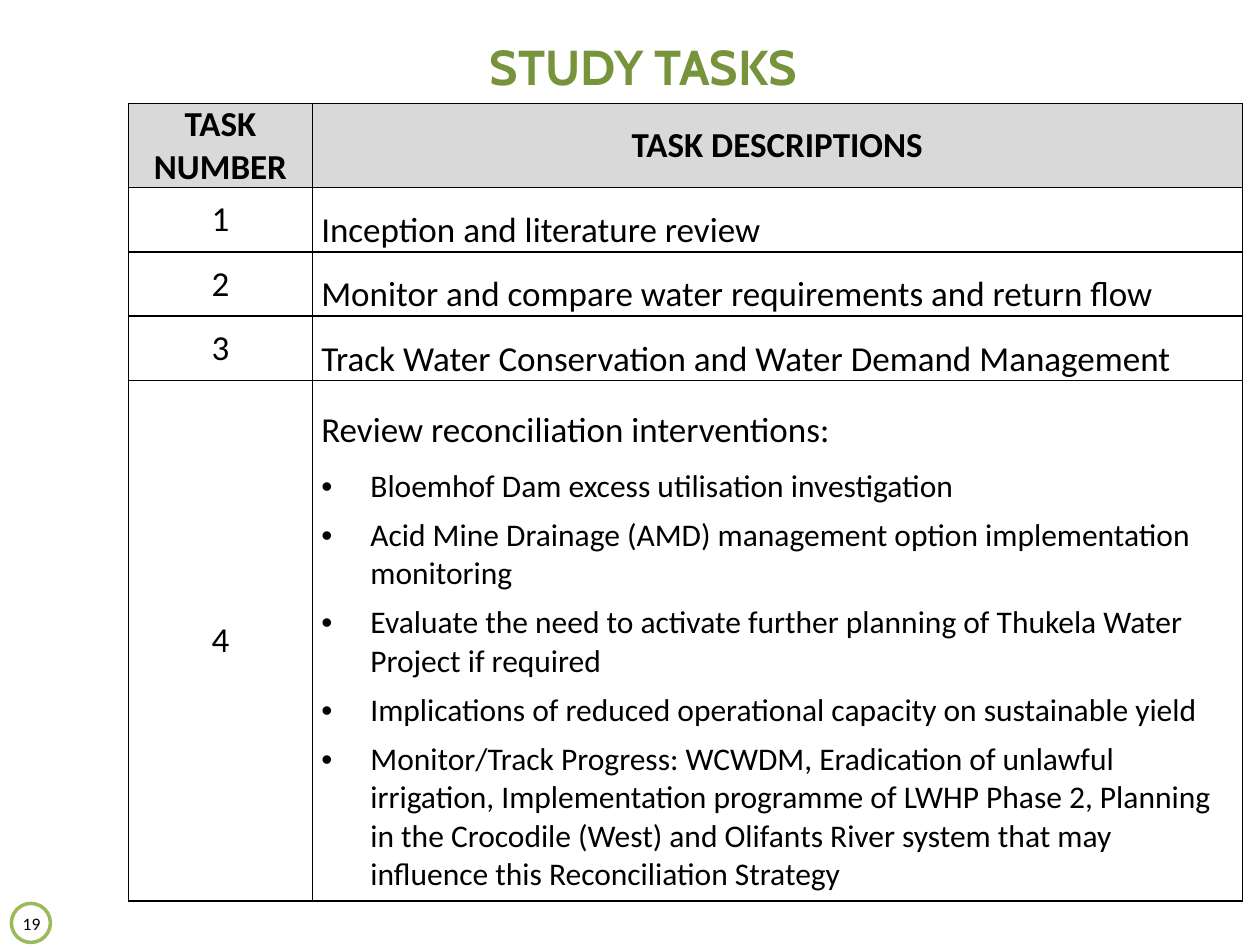
from lxml.etree import SubElement as Sub
from pptx import Presentation
from pptx.dml.color import RGBColor as RGB
from pptx.enum.shapes import MSO_SHAPE as Shape
from pptx.enum.text import MSO_ANCHOR as Anchor, PP_ALIGN as Align
from pptx.oxml.ns import qn
from pptx.util import Inches, Pt

TITLE = "STUDY TASKS"
PAGE = "19"
HEADS = ("TASK NUMBER", "TASK DESCRIPTIONS")
TASKS = [
    ("Inception and literature review", []),
    ("Monitor and compare water requirements and return flow", []),
    ("Track Water Conservation and Water Demand Management", []),
    ("Review reconciliation interventions:", [
        "Bloemhof Dam excess utilisation investigation",
        "Acid Mine Drainage (AMD) management option implementation monitoring",
        "Evaluate the need to activate further planning of Thukela Water "
        "Project if required",
        "Implications of reduced operational capacity on sustainable yield",
        "Monitor/Track Progress: WCWDM, Eradication of unlawful irrigation, "
        "Implementation programme of LWHP Phase 2, Planning in the Crocodile "
        "(West) and Olifants River system that may influence this "
        "Reconciliation Strategy",
    ]),
]
COLS = (1.46, 7.38)
ROWS = (0.67, 0.51, 0.51, 0.51, 4.13)
INDENT = 0.39
THEME = {
    "head": "Cabin", "body": "Calibri",
    "green": "77933C", "ring": "9BBB59", "grey": "D9D9D9",
    "white": "FFFFFF", "black": "000000",
    "title": 28, "text": 20, "item": 18, "page": 10,
}


def color(name):
    return RGB.from_string(THEME[name])


def style(para, size, face="body", ink="black", bold=False):
    for run in para.runs:
        font = run.font
        font.name, font.size, font.bold = THEME[face], Pt(THEME[size]), bold
        font.color.rgb = color(ink)


def bullet(para):
    props = para._p.get_or_add_pPr()
    props.set("marL", str(Inches(INDENT)))
    props.set("indent", str(-Inches(INDENT)))
    Sub(props, qn("a:buFont"), typeface="Arial")
    Sub(props, qn("a:buChar"), char="•")


def frame(cell, fill=None):
    """Set the borders, fill and margins of a cell."""
    props = cell._tc.get_or_add_tcPr()
    for side in "LRTB":
        line = Sub(props, qn(f"a:ln{side}"), w=str(Pt(1)))
        solid = Sub(line, qn("a:solidFill"))
        Sub(solid, qn("a:srgbClr"), val=THEME["black"])
    if fill:
        cell.fill.solid()
        cell.fill.fore_color.rgb = color(fill)
    else:
        cell.fill.background()
    cell.margin_left = cell.margin_right = Inches(0.07)
    cell.margin_top = cell.margin_bottom = 0
    cell.vertical_anchor = Anchor.MIDDLE


def label(cell, text, bold=False):
    cell.text_frame.text = text
    para = cell.text_frame.paragraphs[0]
    para.alignment, para.space_after = Align.CENTER, Pt(2)
    style(para, "text", bold=bold)


def describe(cell, text, items):
    body = cell.text_frame
    body.text = text
    para = body.paragraphs[0]
    para.line_spacing, para.space_after = 1.5, Pt(6)
    style(para, "text")
    for item in items:
        para = body.add_paragraph()
        para.text, para.level = item, 1
        bullet(para)
        para.space_before = para.space_after = Pt(3)
        style(para, "item")


def add_title(slide):
    title = slide.shapes.title
    title.left, title.top = Inches(3.58), Inches(0.24)
    title.width, title.height = Inches(3.05), Inches(0.57)
    body = title.text_frame
    body.text, body.vertical_anchor = TITLE, Anchor.MIDDLE
    body.paragraphs[0].alignment = Align.CENTER
    style(body.paragraphs[0], "title", "head", "green", True)


def add_page(slide):
    ring = slide.shapes.add_shape(Shape.OVAL, Inches(0.09), Inches(7.17),
                                  Inches(0.31), Inches(0.31))
    ring.shadow.inherit = False
    ring.fill.solid()
    ring.fill.fore_color.rgb = color("white")
    ring.line.color.rgb, ring.line.width = color("ring"), Pt(2)
    box = slide.shapes.add_textbox(Inches(0.09), Inches(7.2),
                                   Inches(0.32), Inches(0.2))
    body = box.text_frame
    body.text, body.word_wrap = PAGE, True
    body.margin_left = body.margin_right = 0
    body.paragraphs[0].alignment = Align.CENTER
    style(body.paragraphs[0], "page")


def add_tasks(slide):
    table = slide.shapes.add_table(
        len(ROWS), len(COLS), Inches(1.02), Inches(0.82),
        Inches(sum(COLS)), Inches(sum(ROWS))).table
    table.first_row = table.horz_banding = False
    for col, width in zip(table.columns, COLS):
        col.width = Inches(width)
    for row, height in zip(table.rows, ROWS):
        row.height = Inches(height)
    for col, text in enumerate(HEADS):
        cell = table.cell(0, col)
        frame(cell, "grey")
        label(cell, text, True)
    for num, (text, items) in enumerate(TASKS, 1):
        left, right = table.cell(num, 0), table.cell(num, 1)
        frame(left)
        frame(right)
        label(left, str(num))
        describe(right, text, items)


def main():
    deck = Presentation()
    deck.slide_width, deck.slide_height = Inches(10), Inches(7.5)
    slide = deck.slides.add_slide(deck.slide_layouts[5])
    add_page(slide)
    add_title(slide)
    add_tasks(slide)
    deck.save("out.pptx")


if __name__ == "__main__":
    main()
